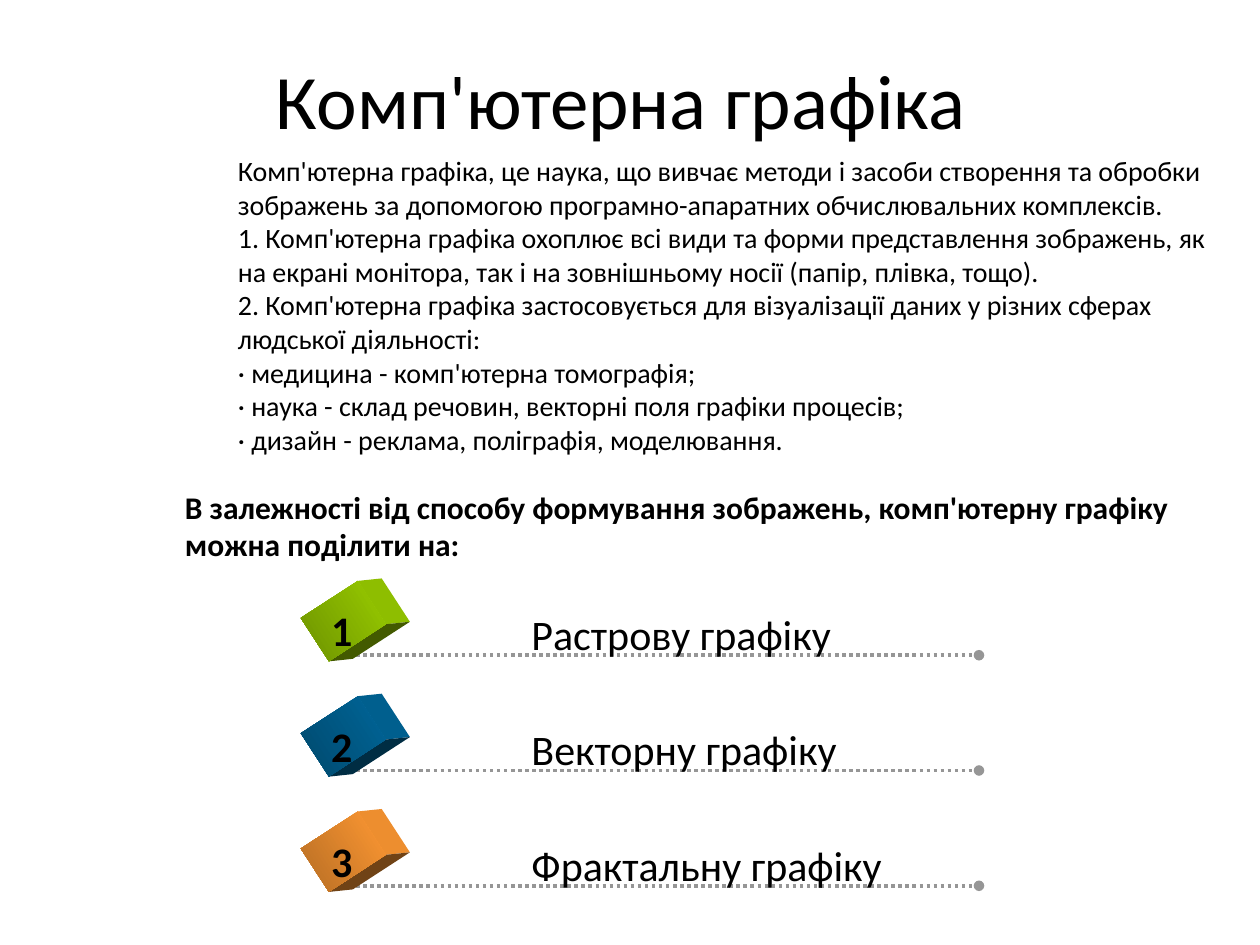
from math import cos, radians, sin

from lxml.etree import SubElement
from pptx import Presentation
from pptx.dml.color import RGBColor
from pptx.enum.dml import MSO_LINE
from pptx.enum.shapes import MSO_CONNECTOR, MSO_SHAPE
from pptx.enum.text import MSO_ANCHOR
from pptx.oxml.ns import qn
from pptx.util import Inches, Pt

# Content
TITLE = "Комп'ютерна графіка"
DEFINITION = [
    "Комп'ютерна графіка, це наука, що вивчає методи і засоби створення та обробки зображень "
    "за допомогою програмно-апаратних обчислювальних комплексів.",
    "1. Комп'ютерна графіка охоплює всі види та форми представлення зображень, як на екрані "
    "монітора, так і на зовнішньому носії (папір, плівка, тощо).",
    "2. Комп'ютерна графіка застосовується для візуалізації даних у різних сферах людської "
    "діяльності:",
    "· медицина - комп'ютерна томографія;",
    "· наука - склад речовин, векторні поля графіки процесів;",
    "· дизайн - реклама, поліграфія, моделювання.",
]
DIVISION = "В залежності від способу формування зображень, комп'ютерну графіку можна поділити на:"
KINDS = [  # label, cube colour, gradient end
    ("Растрову графіку", "99CC00", "6D9200"),
    ("Векторну графіку", "006699", "00496D"),
    ("Фрактальну графіку", "FF9933", "B66D24"),
]

THEME = {
    "font": "Calibri", "text": "000000", "rule": "969696",
    "title": 44, "body": 16, "division": 18, "kind": 24,
    "lit": 0.93, "shaded": 0.44,
}

# Geometry of the list rows, in inches
FIRST_RULE, ROW_STEP = 5.2, 0.915
RULE_LEFT, RULE_RIGHT = 2.77, 7.77
CUBE_LEFT, CUBE_WIDTH, CUBE_HEIGHT, CUBE_TURN = 2.52, 0.41, 0.54, 57
DEPTH_X, DEPTH_Y = 0.19, -0.02


def color(code):
    return RGBColor.from_string(code)


def shade(code, factor):
    return "".join(f"{round(int(code[i:i + 2], 16) * factor):02X}" for i in (0, 2, 4))


def add_text(shapes, place, paragraphs, size, bold=False, wrap=True):
    frame = shapes.add_textbox(*map(Inches, place)).text_frame
    frame.word_wrap = wrap
    for i, text in enumerate(paragraphs):
        paragraph = frame.add_paragraph() if i else frame.paragraphs[0]
        run = paragraph.add_run()
        run.text = text
        run.font.name, run.font.size, run.font.bold = THEME["font"], Pt(size), bold
        run.font.color.rgb = color(THEME["text"])
    return frame


def add_rule(shapes, y):
    rule = shapes.add_connector(
        MSO_CONNECTOR.STRAIGHT, Inches(RULE_LEFT), Inches(y), Inches(RULE_RIGHT), Inches(y))
    rule.line.color.rgb = color(THEME["rule"])
    rule.line.width = Pt(2)
    rule.line.dash_style = MSO_LINE.ROUND_DOT
    SubElement(rule.line._get_or_add_ln(), qn("a:tailEnd"), type="oval")
    SubElement(rule._element.spPr, qn("a:effectLst"))


def add_cube(shapes, top, base, dark):
    center_x, center_y = CUBE_LEFT + CUBE_WIDTH / 2, top + CUBE_HEIGHT / 2
    c, s = cos(radians(CUBE_TURN)), sin(radians(CUBE_TURN))

    def corner(side_x, side_y):
        x, y = side_x * CUBE_WIDTH / 2, side_y * CUBE_HEIGHT / 2
        return center_x + x * c - y * s, center_y + x * s + y * c

    # Side faces run from a front edge back by the depth
    upper, right, lower = corner(-1, -1), corner(1, -1), corner(1, 1)
    for start, end, light in ((upper, right, "lit"), (right, lower, "shaded")):
        back = [(x + DEPTH_X, y + DEPTH_Y) for x, y in (end, start)]
        outline = [(Inches(x), Inches(y)) for x, y in (start, end, *back)]
        builder = shapes.build_freeform(*outline[0])
        builder.add_line_segments(outline[1:], close=True)
        face = builder.convert_to_shape()
        face.shadow.inherit = False
        face.fill.solid()
        face.fill.fore_color.rgb = color(shade(base, THEME[light]))
        face.line.fill.background()

    front = shapes.add_shape(
        MSO_SHAPE.RECTANGLE, Inches(CUBE_LEFT), Inches(top), Inches(CUBE_WIDTH), Inches(CUBE_HEIGHT))
    front.rotation = CUBE_TURN
    front.shadow.inherit = False
    front.line.fill.background()
    front.fill.gradient()
    front.fill.gradient_angle = 270
    for stop, code in zip(front.fill.gradient_stops, (base, dark)):
        stop.color.rgb = color(code)


def main():
    deck = Presentation()
    deck.slide_width, deck.slide_height = Inches(10), Inches(7.5)
    slide = deck.slides.add_slide(deck.slide_layouts[6])

    # Title
    title = add_text(slide.shapes, (2.09, 0.34, 7.67, 0.98), [TITLE], THEME["title"])
    title.vertical_anchor = MSO_ANCHOR.MIDDLE
    title.paragraphs[0].line_spacing = 0.9

    # Numbered kinds of graphics
    for i, (label, base, dark) in enumerate(KINDS):
        y = FIRST_RULE + i * ROW_STEP
        row = slide.shapes.add_group_shape().shapes
        add_rule(row, y)
        add_cube(row, y - CUBE_HEIGHT, base, dark)
        add_text(row, (4.12, y - 0.42, 3.23, 0.51), [label], THEME["kind"])
        add_text(row, (2.53, y - 0.45, 0.35, 0.39), [str(i + 1)], THEME["kind"], True, False)

    # Definition and division
    add_text(slide.shapes, (1.79, 1.17, 7.96, 2.83), DEFINITION, THEME["body"])
    add_text(slide.shapes, (1.37, 3.82, 8.1, 0.71), [DIVISION], THEME["division"], True)

    deck.save("out.pptx")


if __name__ == "__main__":
    main()
